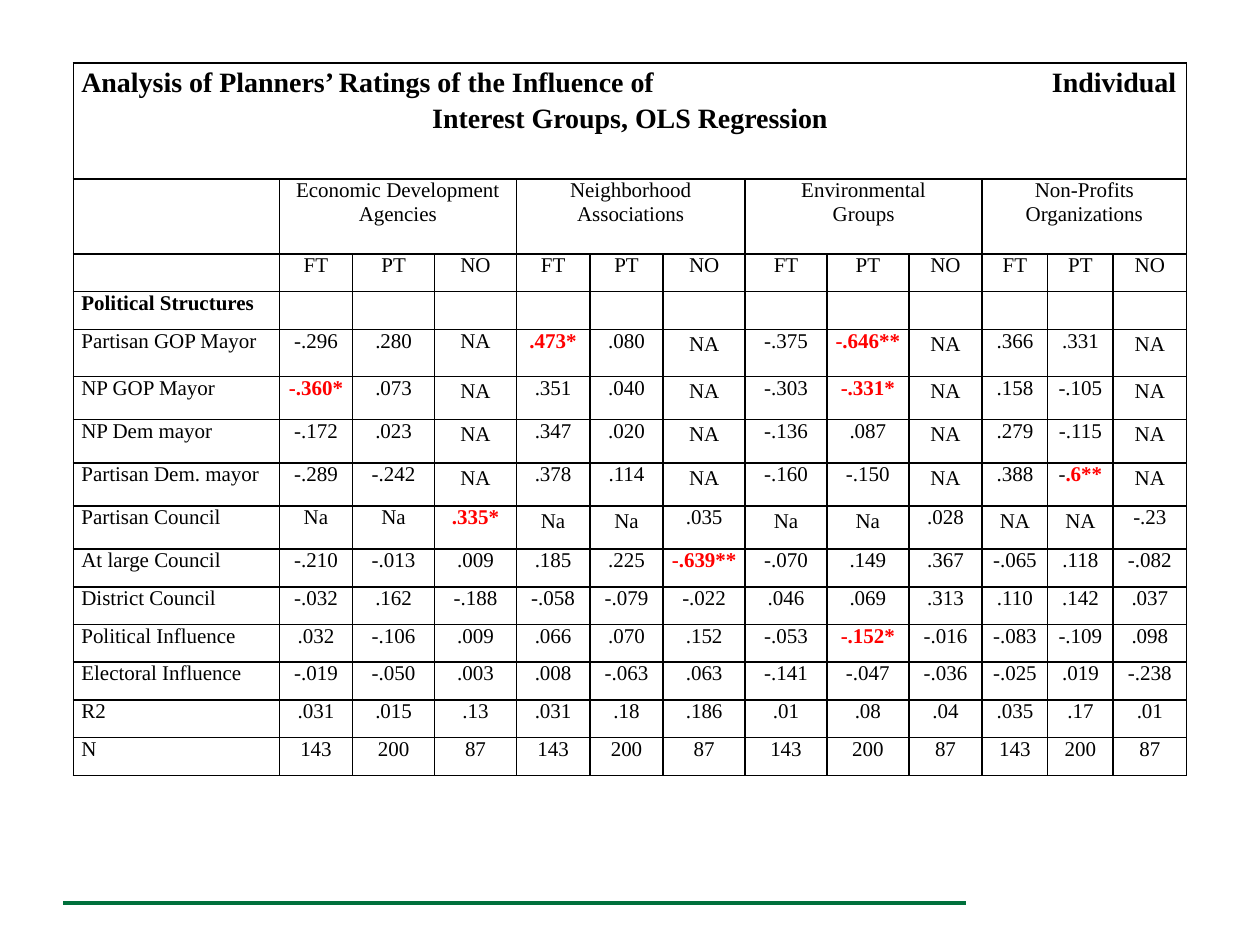
import pptx
import pptx.util
import pptx.dml.color
import pptx.enum.shapes
import pptx.enum.text
import pptx.oxml
import pptx.oxml.ns
from lxml import etree

Cm, Pt = pptx.util.Cm, pptx.util.Pt
ALIGN = pptx.enum.text.PP_ALIGN
COLORS = {"text": "000000", "significant": "FF0000", "rule": "00703C"}
FONT = "Times New Roman"

# Content: "|" separates a plain sign from the highlighted value
TITLE = ["Analysis of Planners’ Ratings of the Influence of\tIndividual",
         "Interest Groups, OLS Regression"]
GROUPS = [["Economic Development", "Agencies"],
          ["Neighborhood", "Associations"],
          ["Environmental", "Groups"],
          ["Non-Profits Organizations"]]
MEASURES = ["FT", "PT", "NO"]
SECTION = "Political Structures"
RESULTS = [
    ("Partisan GOP Mayor", "-.296 .280 NA .473* .080 NA -.375 -.646** NA .366 .331 NA"),
    ("NP GOP Mayor", "-.360* .073 NA .351 .040 NA -.303 -.331* NA .158 -.105 NA"),
    ("NP Dem mayor", "-.172 .023 NA .347 .020 NA -.136 .087 NA .279 -.115 NA"),
    ("Partisan Dem. mayor", "-.289 -.242 NA .378 .114 NA -.160 -.150 NA .388 -|.6** NA"),
    ("Partisan Council", "Na Na .335* Na Na .035 Na Na .028 NA NA -.23"),
    ("At large Council", "-.210 -.013 .009 .185 .225 -.639** -.070 .149 .367 -.065 .118 -.082"),
    ("District Council", "-.032 .162 -.188 -.058 -.079 -.022 .046 .069 .313 .110 .142 .037"),
    ("Political Influence", ".032 -.106 .009 .066 .070 .152 -.053 -.152* -.016 -.083 -.109 .098"),
    ("Electoral Influence", "-.019 -.050 .003 .008 -.063 .063 -.141 -.047 -.036 -.025 .019 -.238"),
    ("R2", ".031 .015 .13 .031 .18 .186 .01 .08 .04 .035 .17 .01"),
    ("N", "143 200 87 143 200 87 143 200 87 143 200 87"),
]
# Missing values set with single line spacing; the others are looser
TIGHT_MISSING = {("Partisan GOP Mayor", 3), ("Partisan Council", 1), ("Partisan Council", 2)}

# Sizes in centimetres
LEFT, TOP = 1.48, 1.27
COLUMNS = [4.15, 1.48, 1.65, 1.65, 1.48, 1.48, 1.65, 1.65, 1.65, 1.48, 1.32, 1.32, 1.48]
ROWS = [2.34, 1.51, 0.76, 0.76, 0.95] + [0.87] * 4 + [0.76] * 6
MARGIN = 0.16


def color(name):
    return pptx.dml.color.RGBColor.from_string(COLORS[name])


def style(font, size, bold=False, shade="text"):
    font.name, font.size, font.bold = FONT, Pt(size), bold
    font.color.rgb = color(shade)


def prepare(cell):
    """Give a cell its margins, black borders and no fill."""
    cell.margin_left = cell.margin_right = Cm(MARGIN)
    cell.margin_top = cell.margin_bottom = 0
    properties = cell._tc.get_or_add_tcPr()
    for side in ("lnL", "lnR", "lnT", "lnB"):
        border = etree.SubElement(properties, pptx.oxml.ns.qn("a:" + side), w=str(Pt(1)))
        fill = etree.SubElement(border, pptx.oxml.ns.qn("a:solidFill"))
        etree.SubElement(fill, pptx.oxml.ns.qn("a:srgbClr"), val=COLORS["text"])
    cell.fill.background()


def write(cell, lines, size=12, bold=False, align=ALIGN.CENTER, shade="text"):
    frame = cell.text_frame
    for index, line in enumerate(lines):
        para = frame.paragraphs[0] if index == 0 else frame.add_paragraph()
        para.alignment = align
        para.add_run().text = line
        style(para.font, size, bold, shade)
    return frame.paragraphs


def write_value(cell, value, loose):
    sign, mark, number = value.partition("|")
    if mark:
        para = write(cell, [sign])[0]
        span = para.add_run()
        span.text = number
        style(span.font, 12, True, "significant")
        return
    starred = "*" in value
    para = write(cell, [value], bold=starred, shade="significant" if starred else "text")[0]
    if loose:
        para.line_spacing, para.space_after = 1.15, Pt(10)


def write_title(cell):
    first, last = write(cell, TITLE, size=16, bold=True)
    first.line_spacing = last.line_spacing = 1.15
    last.space_after = Pt(10)
    # The last word of the first line sits at the right margin
    first.alignment = ALIGN.LEFT
    tabs = pptx.oxml.parse_xml(f'<a:tabLst {pptx.oxml.ns.nsdecls("a")}/>')
    position = Cm(round(sum(COLUMNS) - 2 * MARGIN - 0.05, 2))
    etree.SubElement(tabs, pptx.oxml.ns.qn("a:tab"), pos=str(position), algn="r")
    first._p.get_or_add_pPr().find(pptx.oxml.ns.qn("a:defRPr")).addprevious(tabs)


def add_results_table(page):
    frame = page.shapes.add_table(len(ROWS), len(COLUMNS), Cm(LEFT), Cm(TOP),
                                  Cm(sum(COLUMNS)), Cm(sum(ROWS)))
    table = frame.table
    table.first_row = table.horz_banding = False
    for column, width in zip(table.columns, COLUMNS):
        column.width = Cm(width)
    for row, height in zip(table.rows, ROWS):
        row.height = Cm(height)
    for cell in table.iter_cells():
        prepare(cell)
        style(cell.text_frame.paragraphs[0].font, 12)

    # Title and column headings
    table.cell(0, 0).merge(table.cell(0, len(COLUMNS) - 1))
    write_title(table.cell(0, 0))
    for index, lines in enumerate(GROUPS):
        start = 1 + index * len(MEASURES)
        table.cell(1, start).merge(table.cell(1, start + len(MEASURES) - 1))
        write(table.cell(1, start), lines)
        for offset, measure in enumerate(MEASURES):
            write(table.cell(2, start + offset), [measure])

    # Results
    write(table.cell(3, 0), [SECTION], bold=True, align=ALIGN.LEFT)
    for row, (label, values) in enumerate(RESULTS, start=4):
        write(table.cell(row, 0), [label], align=ALIGN.LEFT)
        for column, value in enumerate(values.split(), start=1):
            loose = value.upper() == "NA" and (label, column) not in TIGHT_MISSING
            write_value(table.cell(row, column), value, loose)


def add_footer_rule(page):
    rule = page.shapes.add_connector(pptx.enum.shapes.MSO_CONNECTOR.STRAIGHT,
                                     Cm(1.27), Cm(18.2), Cm(19.48), Cm(18.2))
    rule.line.color.rgb = color("rule")
    rule.line.width = Pt(2.5)
    etree.SubElement(rule._element.spPr, pptx.oxml.ns.qn("a:effectLst"))


def main():
    deck = pptx.Presentation()
    deck.slide_width, deck.slide_height = Cm(25.4), Cm(19.05)
    page = deck.slides.add_slide(deck.slide_layouts.get_by_name("Blank"))
    add_footer_rule(page)
    add_results_table(page)
    deck.save("out.pptx")


if __name__ == "__main__":
    main()
